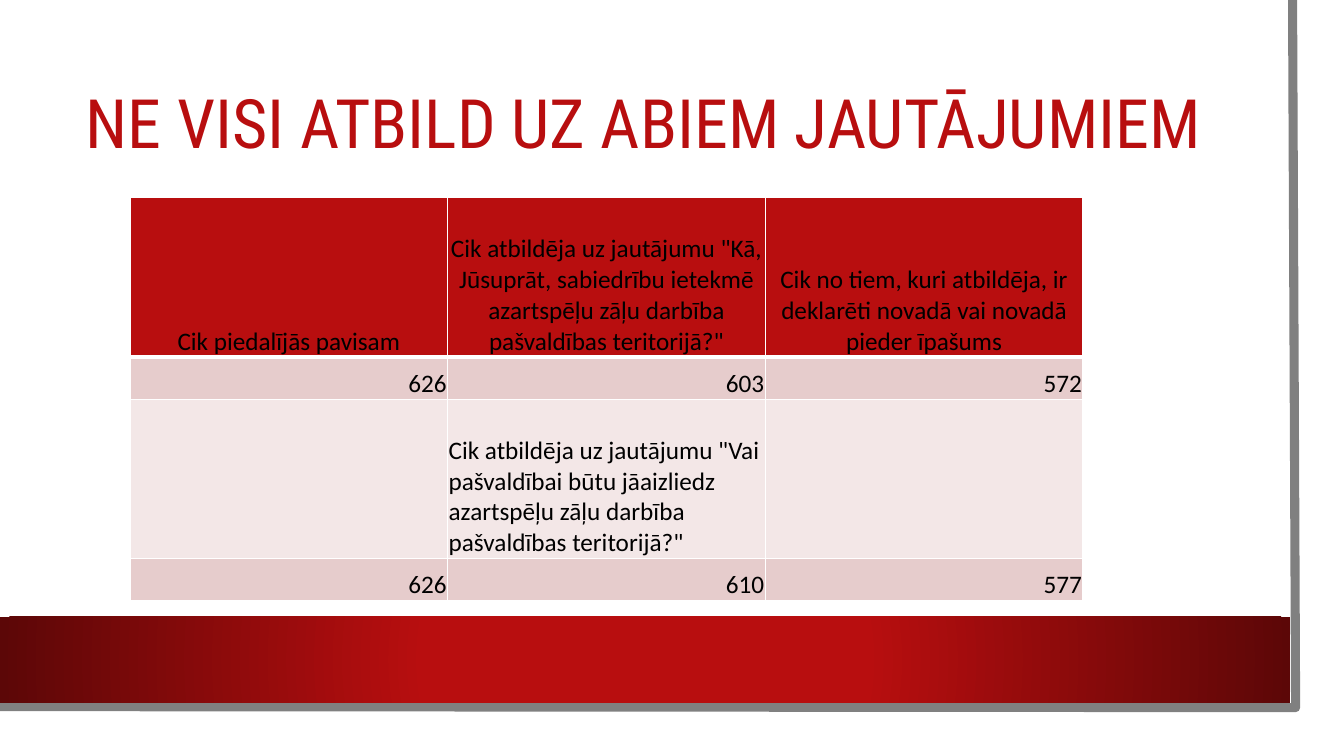
"""Build a slide with a survey response table above a red band."""
import lxml.etree
import pptx
import pptx.dml.color
import pptx.enum.shapes
import pptx.enum.text
import pptx.oxml
import pptx.oxml.ns
import pptx.util

RED = pptx.dml.color.RGBColor(0xB8, 0x0E, 0x0F)
DARK_RED = pptx.dml.color.RGBColor(0x5C, 0x07, 0x07)
ROSE = pptx.dml.color.RGBColor(0xE6, 0xCC, 0xCC)
PALE_ROSE = pptx.dml.color.RGBColor(0xF3, 0xE7, 0xE7)
GRAY = pptx.dml.color.RGBColor(0x80, 0x80, 0x80)
WHITE = pptx.dml.color.RGBColor(0xFF, 0xFF, 0xFF)
BLACK = pptx.dml.color.RGBColor(0x00, 0x00, 0x00)
ALIGN = pptx.enum.text.PP_ALIGN
ANCHOR = pptx.enum.text.MSO_ANCHOR
EMU_PER_PX = 9144

HEADINGS = [
    "Cik piedalījās pavisam",
    'Cik atbildēja uz jautājumu "Kā, Jūsuprāt, sabiedrību ietekmē '
    'azartspēļu zāļu darbība pašvaldības teritorijā?"',
    "Cik no tiem, kuri atbildēja, ir deklarēti novadā vai novadā pieder īpašums",
]
SECOND_QUESTION = (
    'Cik atbildēja uz jautājumu "Vai pašvaldībai būtu jāaizliedz '
    'azartspēļu zāļu darbība pašvaldības teritorijā?"'
)
TABLE_ROWS = [
    (158, RED, ALIGN.CENTER, HEADINGS),
    (42, ROSE, ALIGN.RIGHT, ["626", "603", "572"]),
    (158, PALE_ROSE, ALIGN.LEFT, ["", SECOND_QUESTION, ""]),
    (42, ROSE, ALIGN.RIGHT, ["626", "610", "577"]),
]


def px(length):
    return pptx.util.Emu(length * EMU_PER_PX)


class SlideBuilder:
    title_font = "Roboto Condensed"
    body_font = "Calibri"

    def __init__(self, page):
        self.page = page

    def add_span(self, para, text, font, size, color):
        span = para.add_run()
        span.text = text
        span.font.name = font
        span.font.size = pptx.util.Pt(size)
        span.font.color.rgb = color

    def rectangle(self, left, top, width, height, color):
        box = self.page.shapes.add_shape(
            pptx.enum.shapes.MSO_SHAPE.RECTANGLE,
            px(left), px(top), px(width), px(height))
        box.shadow.inherit = False
        box.fill.solid()
        box.fill.fore_color.rgb = color
        box.line.fill.background()
        return box

    def radial_band(self, left, top, width, height, inner, outer):
        band = self.rectangle(left, top, width, height, inner)
        gradient = pptx.oxml.parse_xml(
            f'<a:gradFill {pptx.oxml.ns.nsdecls("a")} rotWithShape="1"><a:gsLst>'
            f'<a:gs pos="34000"><a:srgbClr val="{inner}"/></a:gs>'
            f'<a:gs pos="100000"><a:srgbClr val="{outer}"/></a:gs></a:gsLst>'
            '<a:path path="circle">'
            '<a:fillToRect l="50000" t="50000" r="50000" b="50000"/>'
            '</a:path></a:gradFill>')
        properties = band._element.spPr
        properties.replace(properties.find(pptx.oxml.ns.qn("a:solidFill")), gradient)

    def outline(self, points, color, weight):
        builder = self.page.shapes.build_freeform(*points[0], scale=EMU_PER_PX)
        builder.add_line_segments(points[1:], close=False)
        edge = builder.convert_to_shape()
        edge.shadow.inherit = False
        edge.fill.background()
        edge.line.color.rgb = color
        edge.line.width = pptx.util.Pt(weight)

    def title(self, left, top, width, height, text):
        box = self.page.shapes.title
        box.left, box.top, box.width, box.height = map(px, (left, top, width, height))
        frame = box.text_frame
        frame.word_wrap = True
        frame.auto_size = pptx.enum.text.MSO_AUTO_SIZE.NONE
        frame.vertical_anchor = ANCHOR.MIDDLE
        para = frame.paragraphs[0]
        para.alignment = ALIGN.LEFT
        para.line_spacing = 0.9
        self.add_span(para, text, self.title_font, 48.6, RED)

    def borders(self, cell, top, bottom):
        properties = cell._tc.get_or_add_tcPr()
        for side, weight in (("L", 1), ("R", 1), ("T", top), ("B", bottom)):
            border = lxml.etree.SubElement(
                properties, pptx.oxml.ns.qn(f"a:ln{side}"), w=str(pptx.util.Pt(weight)))
            paint = lxml.etree.SubElement(border, pptx.oxml.ns.qn("a:solidFill"))
            lxml.etree.SubElement(paint, pptx.oxml.ns.qn("a:srgbClr"), val=str(WHITE))

    def table(self, left, top, column_width, rows):
        columns = len(rows[0][3])
        total_height = sum(row[0] for row in rows)
        grid = self.page.shapes.add_table(
            len(rows), columns, px(left), px(top),
            px(column_width * columns), px(total_height)).table
        for column in grid.columns:
            column.width = px(column_width)
        for index, (height, color, alignment, texts) in enumerate(rows):
            grid.rows[index].height = px(height)
            for cell, text in zip(grid.rows[index].cells, texts):
                self.borders(cell, 3 if index == 1 else 1, 3 if index == 0 else 1)
                cell.fill.solid()
                cell.fill.fore_color.rgb = color
                cell.vertical_anchor = ANCHOR.BOTTOM
                cell.margin_left = cell.margin_right = cell.margin_top = px(1)
                cell.margin_bottom = 0
                para = cell.text_frame.paragraphs[0]
                para.alignment = alignment
                if text:
                    self.add_span(para, text, self.body_font, 18, BLACK)


def main():
    deck = pptx.Presentation()
    deck.slide_width, deck.slide_height = px(1333), px(750)
    page = deck.slides.add_slide(deck.slide_layouts[5])
    builder = SlideBuilder(page)
    builder.rectangle(0, 0, 1310, 727, WHITE)
    builder.outline([(1282, 0), (1285, 702), (-3, 701)], GRAY, 6.5)
    builder.radial_band(0, 612, 1280, 85, RED, DARK_RED)
    builder.title(75, 75, 1137, 100, "NE VISI ATBILD UZ ABIEM JAUTĀJUMIEM")
    page.shapes._spTree.append(page.shapes.title._element)
    builder.table(129, 196, 315, TABLE_ROWS)
    deck.save("out.pptx")


if __name__ == "__main__":
    main()
